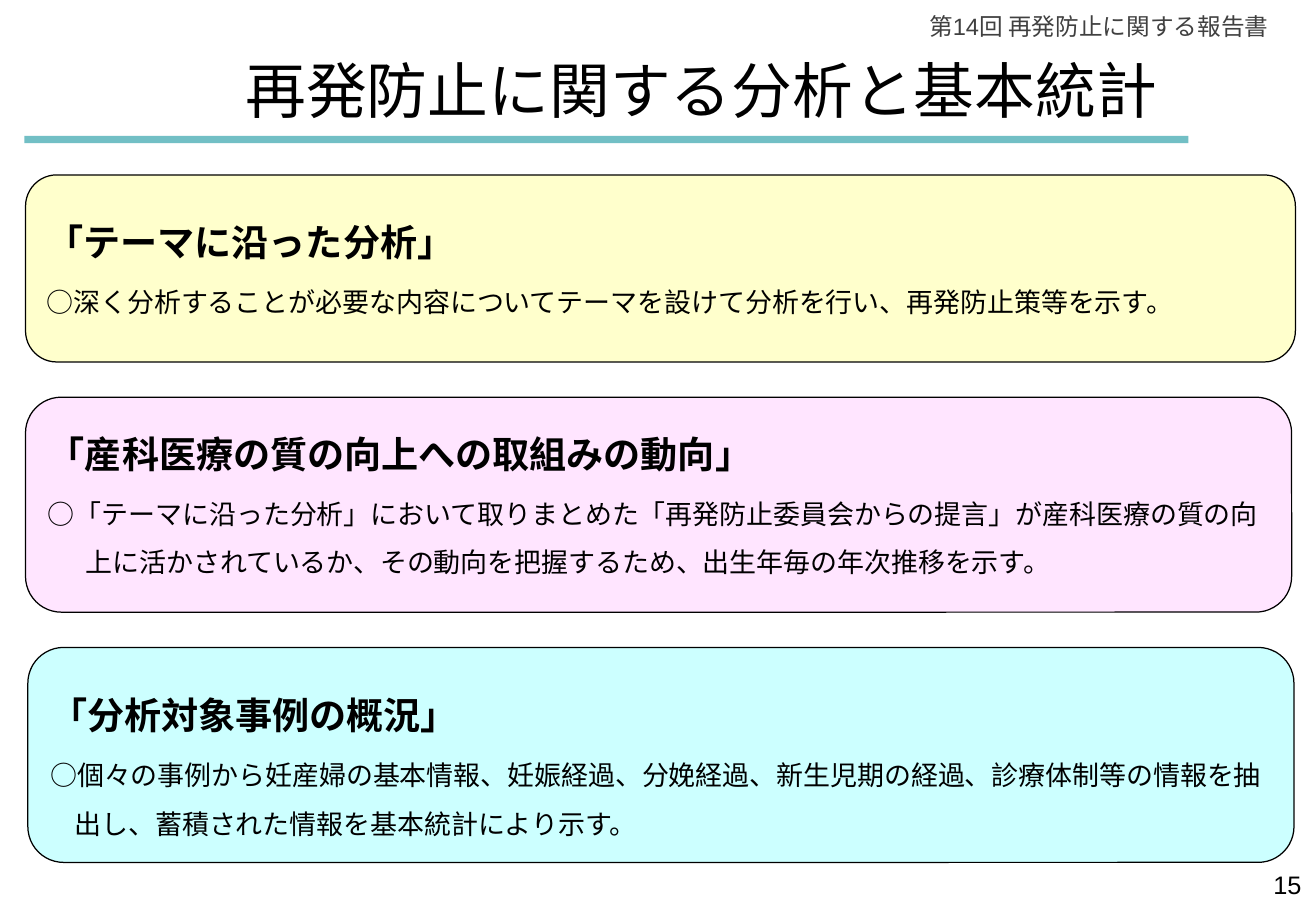
from lxml.etree import SubElement
from pptx import Presentation
from pptx.dml.color import RGBColor
from pptx.enum.shapes import MSO_SHAPE
from pptx.enum.text import MSO_ANCHOR, MSO_AUTO_SIZE, PP_ALIGN
from pptx.oxml.ns import qn
from pptx.util import Inches, Pt

BLACK = RGBColor(0x00, 0x00, 0x00)
GRAY = RGBColor(0x40, 0x40, 0x40)
TEAL = RGBColor(0x72, 0xBF, 0xC5)
YELLOW = RGBColor(0xFF, 0xFF, 0xCC)
PINK = RGBColor(0xFF, 0xE5, 0xFF)
CYAN = RGBColor(0xCC, 0xFF, 0xFF)
JAPANESE = "Noto Sans CJK JP"

deck = Presentation()
deck.slide_width, deck.slide_height = Inches(10.83), Inches(7.5)
page = deck.slides.add_slide(deck.slide_layouts[5])


def area(left, top, width, height):
    """Turn percentages of the slide into left, top, width and height."""
    across, down = deck.slide_width / 100, deck.slide_height / 100
    return [int(left * across), int(top * down), int(width * across), int(height * down)]


def write(para, text, size, font=JAPANESE, color=BLACK, bold=False):
    """Add a run with the same format for Latin and Japanese letters."""
    span = para.add_run()
    span.text = text
    for name, value in {"size": Pt(size), "name": font, "bold": bold}.items():
        setattr(span.font, name, value)
    span.font.color.rgb = color
    SubElement(span.font._element, qn("a:ea")).set("typeface", JAPANESE)


# Teal rule under the title
rule = page.shapes.add_shape(MSO_SHAPE.RECTANGLE, *area(1.85, 14.93, 88.46, 0.8))
rule.shadow.inherit = False
rule.fill.solid()
rule.fill.fore_color.rgb = TEAL
rule.line.fill.background()

# Title
title = page.shapes.title
title.left, title.top, title.width, title.height = area(17.36, 5.07, 71.84, 9.47)
title_format = {
    "word_wrap": False,
    "auto_size": MSO_AUTO_SIZE.NONE,
    "vertical_anchor": MSO_ANCHOR.MIDDLE,
}
for name, value in title_format.items():
    setattr(title.text_frame, name, value)
title_para = title.text_frame.paragraphs[0]
title_para.alignment = PP_ALIGN.CENTER
write(title_para, "再発防止に関する分析と基本統計", 36)

# Report name and page number, both right-aligned
corner_texts = [
    ("第14回 再発防止に関する報告書", 14, GRAY, (68.14, 0.67, 29.18, 4.53)),
    ("15", 15, BLACK, (76.45, 94.8, 23.36, 5.2)),
]
for text, size, color, place in corner_texts:
    box = page.shapes.add_textbox(*area(*place))
    box.text_frame.word_wrap = True
    para = box.text_frame.paragraphs[0]
    para.alignment = PP_ALIGN.RIGHT
    write(para, text, size, "Arial", color)

# Cards stacked with equal gaps:
# fill, left, width, height, heading spacing, body indent in inches, heading, body
cards = [
    (YELLOW, 1.94, 96.49, 20.53, 1.0, 0.2, "「テーマに沿った分析」",
     "○深く分析することが必要な内容についてテーマを設けて分析を行い、再発防止策等を示す。"),
    (PINK, 1.94, 96.21, 23.6, 1.0, 0.31, "「産科医療の質の向上への取組みの動向」",
     "○「テーマに沿った分析」において取りまとめた「再発防止委員会からの提言」が"
     "産科医療の質の向上に活かされているか、その動向を把握するため、出生年毎の年次推移を示す。"),
    (CYAN, 2.12, 96.21, 23.6, 1.5, 0.2, "「分析対象事例の概況」",
     "○個々の事例から妊産婦の基本情報、妊娠経過、分娩経過、新生児期の経過、"
     "診療体制等の情報を抽出し、蓄積された情報を基本統計により示す。"),
]
card_top, card_gap = 19.2, 3.87
for fill, left, width, height, heading_spacing, body_indent, heading, body in cards:
    card = page.shapes.add_shape(
        MSO_SHAPE.ROUNDED_RECTANGLE, *area(left, card_top, width, height))
    card_top += height + card_gap
    card.shadow.inherit = False
    card.fill.solid()
    card.fill.fore_color.rgb = fill
    card.line.color.rgb = BLACK
    card.line.width = Pt(0.75)
    frame = card.text_frame
    frame.word_wrap = True
    frame.vertical_anchor = MSO_ANCHOR.MIDDLE

    heading_para, body_para = frame.paragraphs[0], frame.add_paragraph()
    body_para.space_before = Pt(3.2)
    lines = [
        (heading_para, heading, 22, True, heading_spacing, 0.31),
        (body_para, body, 16, False, 1.5, body_indent),
    ]
    for para, text, size, bold, spacing, indent in lines:
        para.alignment = PP_ALIGN.LEFT
        para.line_spacing = spacing
        properties = para._p.get_or_add_pPr()
        properties.set("marL", str(Inches(indent)))
        properties.set("indent", str(-Inches(indent)))
        write(para, text, size, bold=bold)

deck.save("out.pptx")
